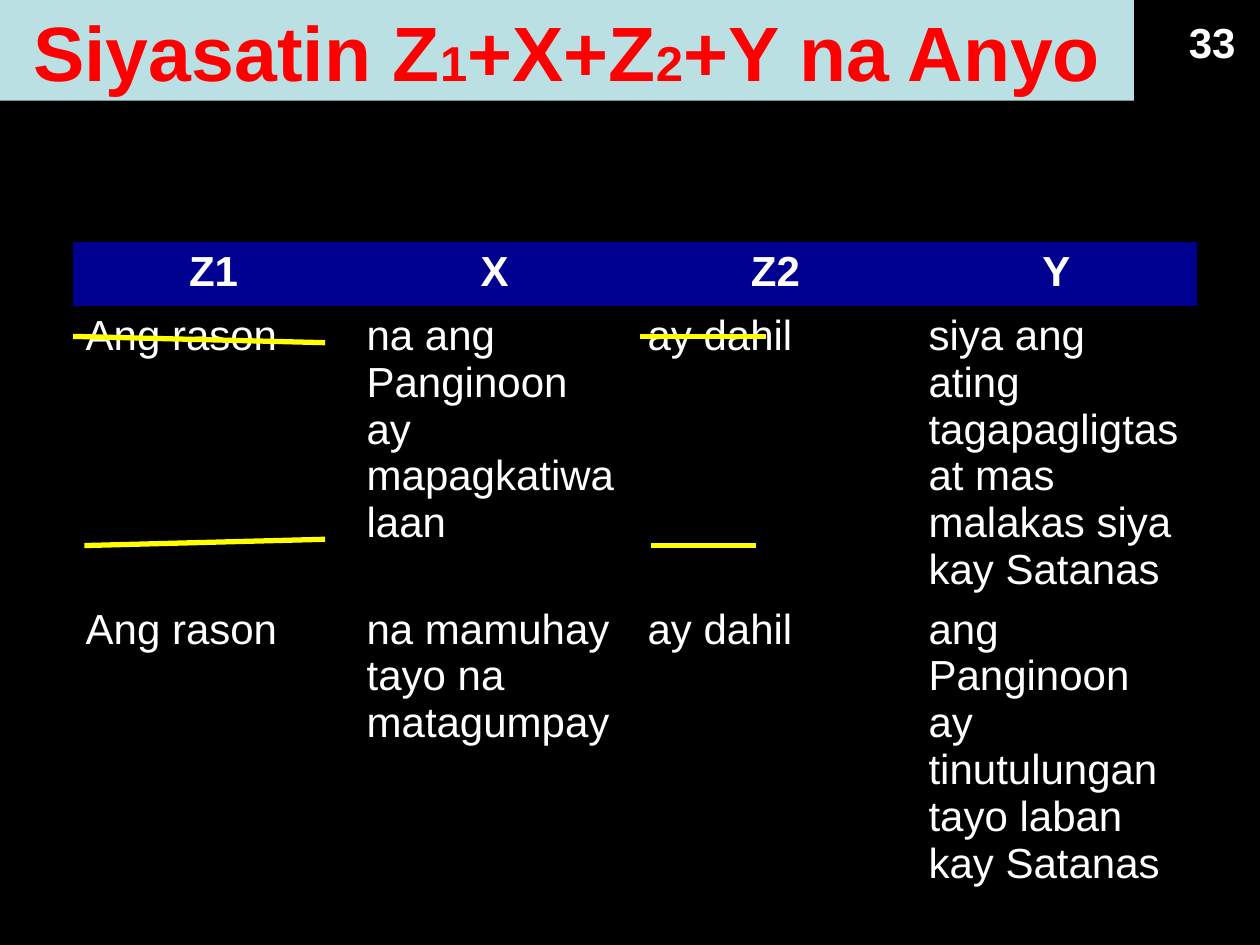
from lxml.etree import SubElement
from pptx import Presentation
from pptx.dml.color import RGBColor
from pptx.enum.shapes import MSO_CONNECTOR as Connector, MSO_SHAPE as Shape
from pptx.enum.text import MSO_ANCHOR as Anchor, PP_ALIGN as Align
from pptx.oxml.ns import qn
from pptx.util import Inches, Pt

BLACK = RGBColor(0x00, 0x00, 0x00)
WHITE = RGBColor(0xFF, 0xFF, 0xFF)
RED = RGBColor(0xFF, 0x00, 0x00)
YELLOW = RGBColor(0xFF, 0xFF, 0x00)
NAVY = RGBColor(0x00, 0x00, 0x90)
PALE_BLUE = RGBColor(0xBB, 0xE0, 0xE3)

TITLE = [("Siyasatin Z", 44), ("1", 28), ("+X+Z", 44), ("2", 28), ("+Y na Anyo", 44)]
PAGE_NUMBER = "33"
ROWS = [
    ("Z1", "X", "Z2", "Y"),
    ("Ang rason", "na ang Panginoon ay mapagkatiwalaan", "ay dahil",
     "siya ang ating tagapagligtas at mas malakas siya kay Satanas"),
    ("Ang rason", "na mamuhay tayo na matagumpay", "ay dahil",
     "ang Panginoon ay tinutulungan tayo laban kay Satanas"),
]
ROW_HEIGHTS = [0.51, 1.62, 1.62]
COLUMN_WIDTH = 2.23
STRIKES = [
    (0.58, 2.67, 2.58, 2.72),
    (5.08, 2.67, 6.08, 2.67),
    (0.67, 4.33, 2.58, 4.28),
    (5.17, 4.33, 6, 4.33),
]


def write(frame, spans, color, bold=True, align=Align.CENTER):
    frame.word_wrap = True
    para = frame.paragraphs[0]
    para.alignment = align
    for text, size in spans:
        span = para.add_run()
        span.text = text
        span.font.color.rgb = color
        style = {"name": "Arial", "size": Pt(size), "bold": bold}
        for name, value in style.items():
            setattr(span.font, name, value)


def paint(target, color):
    target.fill.solid()
    target.fill.fore_color.rgb = color


def add_table(page):
    count = len(ROWS[0])
    sizes = (0.58, 1.92, COLUMN_WIDTH * count, sum(ROW_HEIGHTS))
    table = page.shapes.add_table(len(ROWS), count, *map(Inches, sizes)).table
    for column in table.columns:
        column.width = Inches(COLUMN_WIDTH)
    for r, (texts, height) in enumerate(zip(ROWS, ROW_HEIGHTS)):
        table.rows[r].height = Inches(height)
        header = r == 0
        for c, text in enumerate(texts):
            cell = table.cell(r, c)
            paint(cell, NAVY if header else BLACK)
            write(cell.text_frame, [(text, 24)], WHITE, header,
                  Align.CENTER if header else Align.LEFT)
            for side in ("a:lnL", "a:lnR", "a:lnT", "a:lnB"):
                border = cell._tc.get_or_add_tcPr().makeelement(qn(side), {"w": "0"})
                SubElement(border, qn("a:noFill"))
                properties = cell._tc.tcPr
                properties.insert(len(properties) - 1, border)


def add_strike(page, ends):
    strike = page.shapes.add_connector(Connector.STRAIGHT, *map(Inches, ends))
    strike.line.color.rgb = YELLOW
    strike.line.width = Pt(3)
    SubElement(strike._element.spPr, qn("a:effectLst"))


def main():
    deck = Presentation()
    deck.slide_width, deck.slide_height = Inches(10), Inches(7.5)
    page = deck.slides.add_slide(deck.slide_layouts[6])
    paint(page.background, BLACK)

    add_table(page)

    number = page.shapes.add_textbox(*map(Inches, (9.33, 0.08, 0.58, 0.5)))
    write(number.text_frame, [(PAGE_NUMBER, 24)], WHITE)

    title = page.shapes.add_shape(Shape.RECTANGLE, *map(Inches, (0, 0, 9, 0.8)))
    title.shadow.inherit = False
    paint(title, PALE_BLUE)
    title.line.fill.background()
    title.text_frame.vertical_anchor = Anchor.MIDDLE
    write(title.text_frame, TITLE, RED)

    for ends in STRIKES:
        add_strike(page, ends)

    deck.save("out.pptx")


if __name__ == "__main__":
    main()
